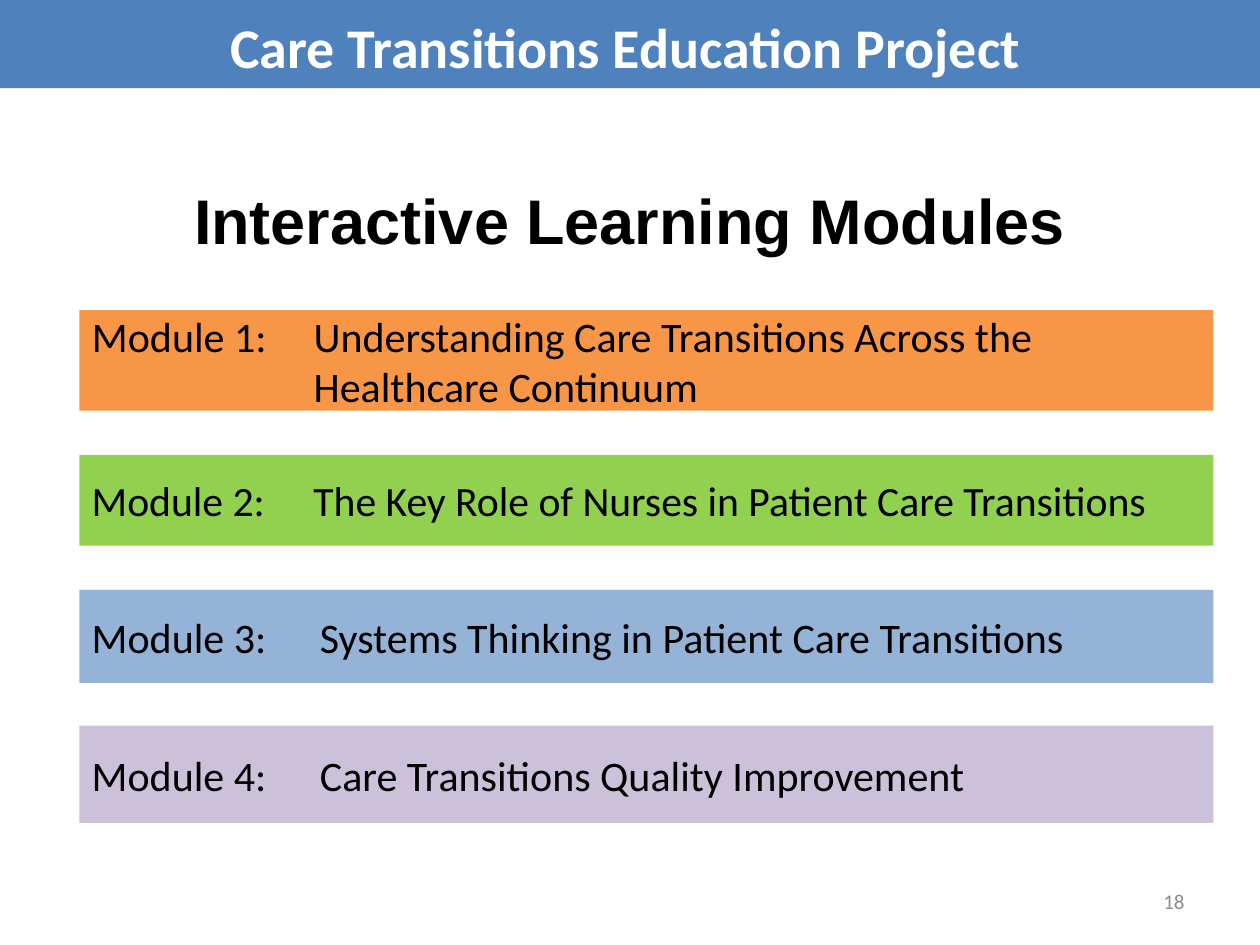
from pptx import Presentation
from pptx.dml.color import RGBColor
from pptx.enum.shapes import MSO_SHAPE as Shape
from pptx.enum.text import MSO_ANCHOR as Anchor, MSO_AUTO_SIZE as AutoSize, PP_ALIGN as Align
from pptx.util import Cm, Pt

BLACK = RGBColor(0x00, 0x00, 0x00)
WHITE = RGBColor(0xFF, 0xFF, 0xFF)
GRAY = RGBColor(0x8C, 0x8C, 0x8C)
BLUE = RGBColor(0x4F, 0x81, 0xBD)
ORANGE = RGBColor(0xF7, 0x96, 0x46)
GREEN = RGBColor(0x92, 0xD0, 0x50)
LIGHT_BLUE = RGBColor(0x95, 0xB3, 0xD7)
LAVENDER = RGBColor(0xCC, 0xC1, 0xDA)

MODULE_LEFT, MODULE_WIDTH = Cm(1.6), Cm(22.86)


def write(shape, text, size, color, align, font="Calibri", bold=False, anchor=Anchor.MIDDLE):
    frame = shape.text_frame
    frame.text = text
    frame.word_wrap = True
    frame.auto_size = AutoSize.NONE
    frame.vertical_anchor = anchor
    paragraph = frame.paragraphs[0]
    paragraph.alignment = align
    paragraph.font.name = font
    paragraph.font.size = Pt(size)
    paragraph.font.bold = bold
    paragraph.font.color.rgb = color
    return paragraph


def add_bar(left, top, width, height):
    bar = slide.shapes.add_shape(Shape.RECTANGLE, left, top, width, height)
    bar.shadow.inherit = False
    bar.line.fill.background()
    return bar


prs = Presentation()
prs.slide_width, prs.slide_height = Cm(25.4), Cm(19.05)
slide = prs.slides.add_slide(prs.slide_layouts[5])

banner = add_bar(0, 0, prs.slide_width, Cm(1.78))
banner.fill.solid()
banner.fill.fore_color.rgb = BLUE

project = slide.shapes.add_textbox(Cm(3.4), Cm(0.13), Cm(18.42), Cm(1.6))
write(project, "Care Transitions Education Project", 32, WHITE, Align.CENTER,
      bold=True, anchor=Anchor.TOP)

heading = slide.shapes.add_textbox(Cm(1.27), Cm(2.84), Cm(22.86), Cm(3.18))
write(heading, "Interactive Learning Modules", 36, BLACK, Align.CENTER, font="Arial", bold=True)

modules = [
    ("Understanding Care Transitions Across the Healthcare Continuum", ORANGE, 6.25, 2.03, 4.47, 24),
    ("The Key Role of Nurses in Patient Care Transitions", GREEN, 9.17, 1.83, 4.47, 23.8),
    ("Systems Thinking in Patient Care Transitions", LIGHT_BLUE, 11.89, 1.88, 4.6, 24),
    ("Care Transitions Quality Improvement", LAVENDER, 14.63, 1.96, 4.6, 24),
]
for number, (topic, color, top, height, indent, size) in enumerate(modules, start=1):
    place = MODULE_LEFT, Cm(top), MODULE_WIDTH, Cm(height)
    if number == 1:
        module = slide.shapes.title
        module.left, module.top, module.width, module.height = place
    else:
        module = add_bar(*place)
    module.fill.solid()
    module.fill.fore_color.rgb = color
    paragraph = write(module, f"Module {number}: \t{topic}", size, BLACK, Align.LEFT)
    properties = paragraph._p.get_or_add_pPr()
    properties.set("marL", str(Cm(indent)))
    properties.set("indent", str(-Cm(indent)))

page_number = slide.shapes.add_textbox(Cm(18.2), Cm(17.66), Cm(5.93), Cm(1.01))
write(page_number, "18", 12, GRAY, Align.RIGHT)

prs.save("out.pptx")
